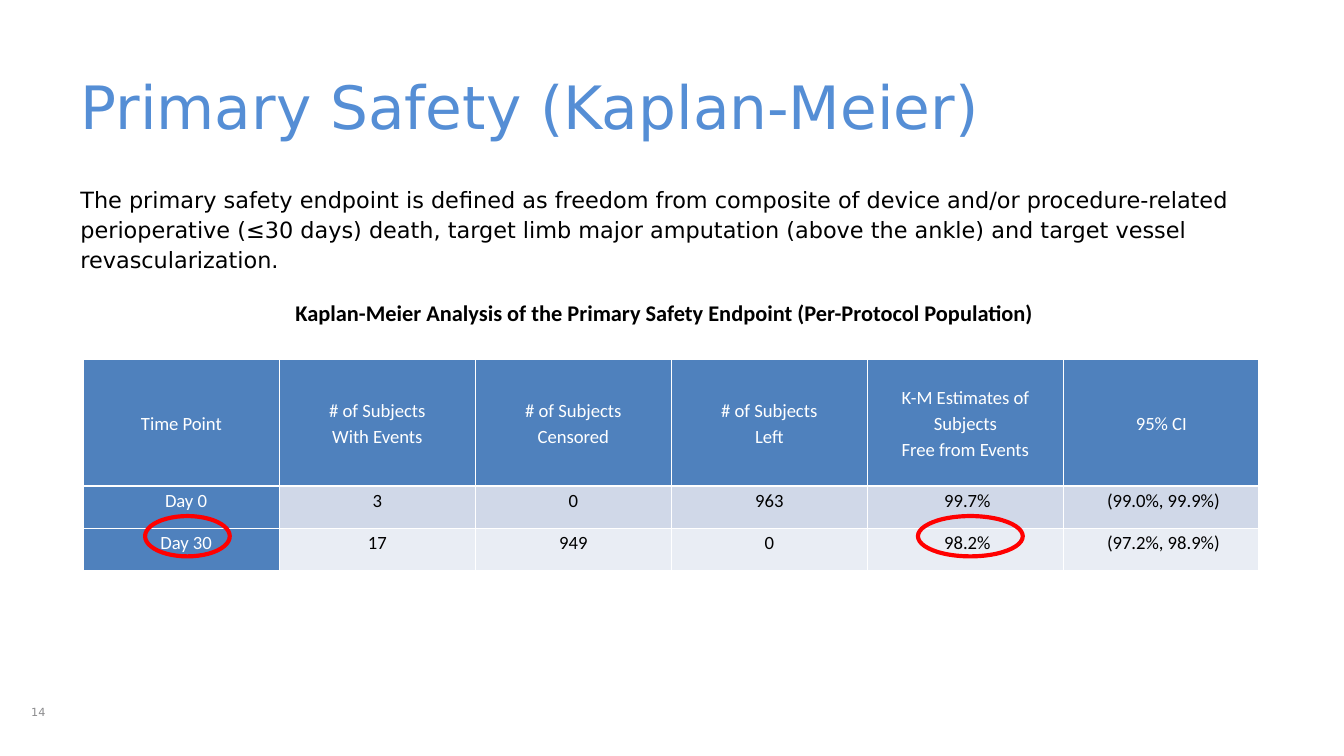
from typing import NamedTuple

from pptx import Presentation
from pptx.dml.color import RGBColor
from pptx.enum.shapes import MSO_SHAPE
from pptx.enum.text import MSO_ANCHOR, PP_ALIGN
from pptx.oxml import parse_xml
from pptx.oxml.ns import nsdecls
from pptx.util import Inches, Pt

BLACK = RGBColor(0x00, 0x00, 0x00)
WHITE = RGBColor(0xFF, 0xFF, 0xFF)
TITLE_BLUE = RGBColor(0x55, 0x8E, 0xD5)
HEADER_BLUE = RGBColor(0x4F, 0x81, 0xBD)
BAND_FILLS = (RGBColor(0xD0, 0xD8, 0xE8), RGBColor(0xE9, 0xED, 0xF4))
NUMBER_GRAY = RGBColor(0x8C, 0x8C, 0x8E)
RED = RGBColor(0xFF, 0x00, 0x00)
SANS = "DejaVu Sans"
TABLE_FONT = "Calibri"

DEFINITION = (
    "The primary safety endpoint is defined as freedom from composite of device "
    "and/or procedure-related perioperative (≤30 days) death, target limb major "
    "amputation (above the ankle) and target vessel revascularization."
)
ROWS = (
    ("Time Point", "# of Subjects\vWith Events", "# of Subjects\vCensored",
     "# of Subjects\vLeft", "K-M Estimates of\vSubjects\vFree from Events", "95% CI"),
    ("Day 0", "3", "0", "963", "99.7%", "(99.0%, 99.9%)"),
    ("Day 30", "17", "949", "0", "98.2%", "(97.2%, 98.9%)"),
)
# The header is three times as tall as a data row
ROW_SHARES = (3, 1, 1)
# Left cell margins below the header, one per column
LEFT_MARGINS = (0.08, 0.01, 0.01, 0.01, 0.04, 0.04)


class Area(NamedTuple):
    left: float
    top: float
    width: float
    height: float

    def lengths(self):
        return tuple(Inches(value) for value in self)


class TextStyle(NamedTuple):
    font: str
    size: float
    color: RGBColor
    bold: bool = False
    align: PP_ALIGN = PP_ALIGN.LEFT
    line_spacing: float = 1.0


HIGHLIGHTS = (Area(1.08, 3.84, 0.63, 0.3), Area(6.83, 3.84, 0.78, 0.3))


def write(frame, text: str, style: TextStyle):
    para = frame.paragraphs[0]
    para.text = text
    para.alignment = style.align
    para.line_spacing = style.line_spacing
    para.font.name = style.font
    para.font.size = Pt(style.size)
    para.font.bold = style.bold
    para.font.color.rgb = style.color
    return para


def add_text(page, area: Area, text: str, style: TextStyle, anchor=MSO_ANCHOR.TOP) -> None:
    frame = page.shapes.add_textbox(*area.lengths()).text_frame
    frame.word_wrap = True
    frame.vertical_anchor = anchor
    write(frame, text, style)


def add_borders(cell) -> None:
    properties = cell._tc.get_or_add_tcPr()
    for side in ("lnL", "lnR", "lnT", "lnB"):
        properties.append(parse_xml(
            f'<a:{side} {nsdecls("a")} w="{Pt(1)}"><a:solidFill>'
            f'<a:srgbClr val="{WHITE}"/></a:solidFill></a:{side}>'
        ))


def fill_cell(cell, text: str, row: int, column: int) -> None:
    is_header = row == 0
    is_label = is_header or column == 0
    cell.margin_left = Inches(0.01 if is_header else LEFT_MARGINS[column])
    cell.margin_right = Inches(0.01)
    cell.margin_top = cell.margin_bottom = 0
    cell.vertical_anchor = MSO_ANCHOR.MIDDLE if is_header else MSO_ANCHOR.TOP
    style = TextStyle(TABLE_FONT, 10, WHITE if is_label else BLACK,
                      align=PP_ALIGN.CENTER, line_spacing=1.15)
    para = write(cell.text_frame, text, style)
    para.space_after = Pt(0.5)
    add_borders(cell)
    cell.fill.solid()
    cell.fill.fore_color.rgb = HEADER_BLUE if is_label else BAND_FILLS[row - 1]


def add_results_table(page, area: Area) -> None:
    table = page.shapes.add_table(len(ROWS), len(ROWS[0]), *area.lengths()).table
    for row, (share, texts) in enumerate(zip(ROW_SHARES, ROWS)):
        table.rows[row].height = Inches(area.height * share / sum(ROW_SHARES))
        for column, text in enumerate(texts):
            fill_cell(table.cell(row, column), text, row, column)


def add_highlight(page, area: Area) -> None:
    ring = page.shapes.add_shape(MSO_SHAPE.OVAL, *area.lengths())
    ring.shadow.inherit = False
    ring.fill.background()
    ring.line.color.rgb = RED
    ring.line.width = Pt(2.25)


def main() -> None:
    deck = Presentation()
    deck.slide_width = Inches(10)
    deck.slide_height = deck.slide_width * 9 // 16
    page = deck.slides.add_slide(deck.slide_layouts[5])

    title = page.shapes.title
    title.left, title.top, title.width, title.height = Area(0.5, 0.44, 9, 0.66).lengths()
    title.text_frame.vertical_anchor = MSO_ANCHOR.BOTTOM
    write(title.text_frame, "Primary Safety (Kaplan-Meier)", TextStyle(SANS, 32, TITLE_BLUE))

    add_text(page, Area(0.5, 1.31, 9, 0.83), DEFINITION,
             TextStyle(SANS, 12, BLACK, line_spacing=1.12))
    add_text(page, Area(0, 5.05, 0.57, 0.49), "14",
             TextStyle(SANS, 6, NUMBER_GRAY, align=PP_ALIGN.CENTER), MSO_ANCHOR.MIDDLE)
    add_results_table(page, Area(0.62, 2.67, 8.75, 1.58))
    add_text(page, Area(0.57, 2.18, 8.75, 0.3),
             "Kaplan-Meier Analysis of the Primary Safety Endpoint (Per-Protocol Population)",
             TextStyle(TABLE_FONT, 12, BLACK, bold=True, align=PP_ALIGN.CENTER))
    for area in HIGHLIGHTS:
        add_highlight(page, area)

    deck.save("out.pptx")


if __name__ == "__main__":
    main()
